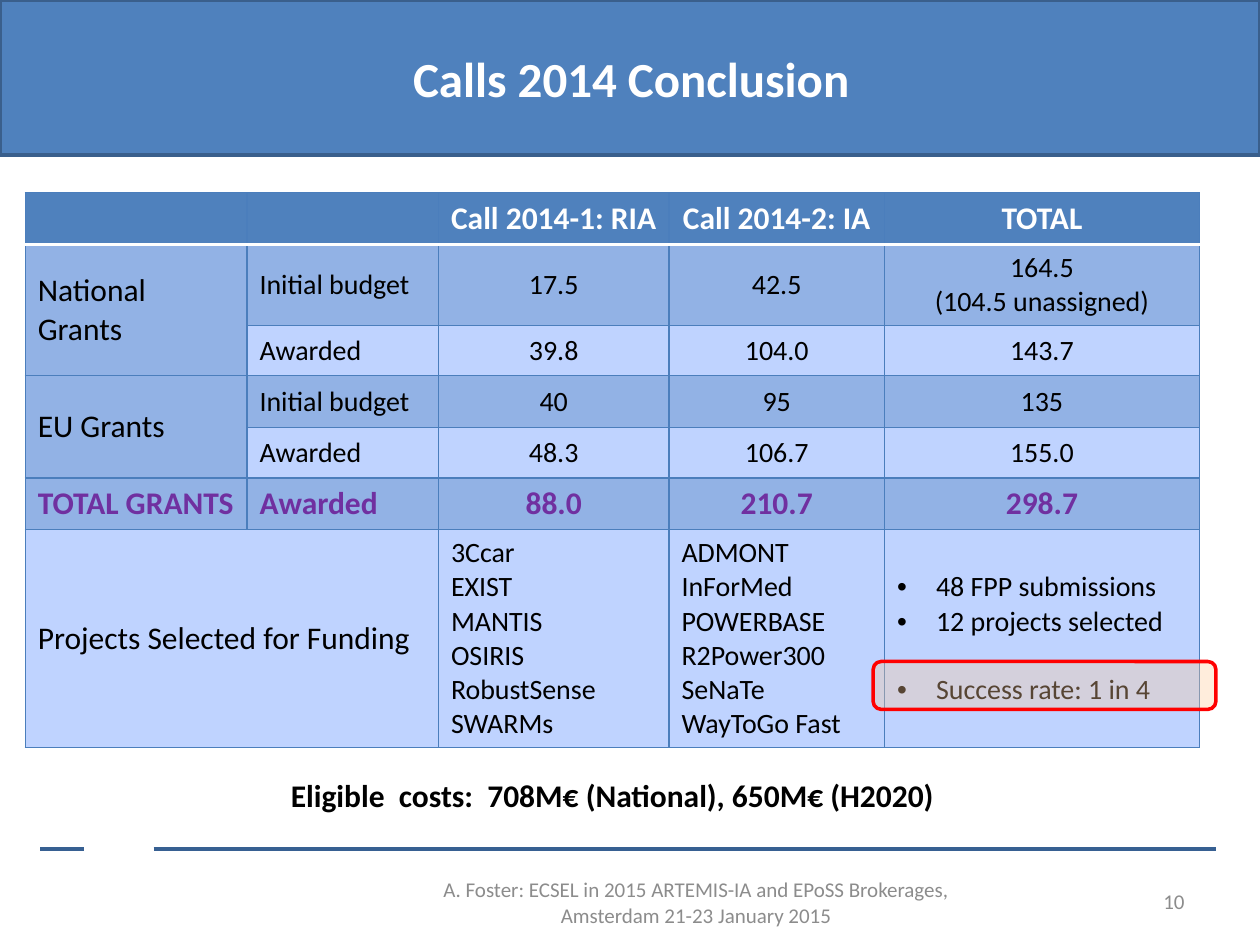
from lxml.etree import SubElement
from pptx import Presentation
from pptx.dml.color import RGBColor as RGB
from pptx.enum.shapes import MSO_CONNECTOR as CONN, MSO_SHAPE as SHAPE
from pptx.enum.text import MSO_ANCHOR as ANC, PP_ALIGN as AL
from pptx.oxml import parse_xml
from pptx.oxml.ns import nsdecls, qn
from pptx.util import Inches, Pt

HEX = {"blue": "4F81BD", "edge": "3A5F8C", "rule": "376092", "grid": "4B7EBC",
       "dark": "92B2E5", "light": "BFD3FF", "white": "FFFFFF", "black": "000000",
       "purple": "7030A0", "grey": "8C8C8C", "peach": "FFCC99", "red": "FF0000"}
COLS = [1.76, 1.52, 1.83, 1.71, 2.5]
ROWS = [0.41, 0.64, 0.4, 0.41, 0.4, 0.41, 1.73]
CELLS = [
    ["", "", "Call 2014-1: RIA", "Call 2014-2: IA", "TOTAL"],
    ["National Grants", "Initial budget", "17.5", "42.5", "164.5\n(104.5 unassigned)"],
    ["", "Awarded", "39.8", "104.0", "143.7"],
    ["EU Grants", "Initial budget", "40", "95", "135"],
    ["", "Awarded", "48.3", "106.7", "155.0"],
    ["TOTAL GRANTS", "Awarded", "88.0", "210.7", "298.7"],
    ["Projects Selected for Funding", "",
     "3Ccar\nEXIST\nMANTIS\nOSIRIS\nRobustSense\nSWARMs",
     "ADMONT\nInForMed\nPOWERBASE\nR2Power300\nSeNaTe\nWayToGo Fast",
     "48 FPP submissions\n12 projects selected\nSuccess rate: 1 in 4"],
]


def color(name):
    return RGB.from_string(HEX[name])


def add_bullet(para):
    props = para._p.get_or_add_pPr()
    props.set("marL", str(Inches(0.31)))
    props.set("indent", str(-Inches(0.31)))
    SubElement(props, qn("a:buFont")).set("typeface", "Arial")
    SubElement(props, qn("a:buChar")).set("char", "•")


def write(frame, text, size=16, tint="black", bold=False, align=AL.LEFT, bullet=False):
    frame.word_wrap = True
    for i, line in enumerate(text.split("\n")):
        para = frame.paragraphs[0] if i == 0 else frame.add_paragraph()
        para.alignment = align
        if bullet:
            add_bullet(para)
        run = para.add_run()
        run.text = line
        font = run.font
        font.name, font.size, font.bold = "Calibri", Pt(size), bold
        font.color.rgb = color(tint)


def add_text(slide, text, box, anchor=ANC.MIDDLE, **style):
    frame = slide.shapes.add_textbox(*map(Inches, box)).text_frame
    frame.vertical_anchor = anchor
    write(frame, text, **style)


def add_box(slide, kind, box, fill, line, alpha=None):
    shape = slide.shapes.add_shape(kind, *map(Inches, box))
    shape.shadow.inherit = False
    shape.fill.solid()
    shape.fill.fore_color.rgb = color(fill)
    shape.line.color.rgb = color(line)
    shape.line.width = Pt(2)
    if alpha:
        tone = shape.element.spPr.find(qn("a:solidFill"))[0]
        SubElement(tone, qn("a:alpha")).set("val", str(alpha * 1000))


def add_rule(slide, left, right, top):
    line = slide.shapes.add_connector(
        CONN.STRAIGHT, Inches(left), Inches(top), Inches(right), Inches(top))
    line.line.color.rgb = color("rule")
    line.line.width = Pt(2.25)
    SubElement(line.element.spPr, qn("a:effectLst"))


def set_borders(cell, row):
    """Draw the grid, with a white rule under the header row."""
    props = cell._tc.get_or_add_tcPr()
    for i, side in enumerate("LRTB"):
        header = (row, side) in ((0, "B"), (1, "T"))
        tint, width = ("white", 2) if header else ("grid", 0.75)
        props.insert(i, parse_xml(
            f'<a:ln{side} {nsdecls("a")} w="{Pt(width)}"><a:solidFill>'
            f'<a:srgbClr val="{HEX[tint]}"/></a:solidFill></a:ln{side}>'))


def cell_style(row, col):
    style = {"align": AL.CENTER if col > 1 and row < 6 else AL.LEFT,
             "size": 18 if col == 0 or row in (0, 5) else 16,
             "bold": row in (0, 5),
             "bullet": (row, col) == (6, 4)}
    style["tint"] = {0: "white", 5: "purple"}.get(row, "black")
    return style


def add_grid(slide):
    box = map(Inches, (0.2, 1.53, sum(COLS), sum(ROWS)))
    table = slide.shapes.add_table(len(ROWS), len(COLS), *box).table
    table.horz_banding = False
    for col, width in zip(table.columns, COLS):
        col.width = Inches(width)
    for row, height in zip(table.rows, ROWS):
        row.height = Inches(height)
    for r, texts in enumerate(CELLS):
        for c, text in enumerate(texts):
            cell = table.cell(r, c)
            cell.vertical_anchor = ANC.MIDDLE
            cell.fill.solid()
            band = "blue" if r == 0 else "dark" if r % 2 else "light"
            cell.fill.fore_color.rgb = color(band)
            set_borders(cell, r)
            if text:
                write(cell.text_frame, text, **cell_style(r, c))
    for first, last in (((1, 0), (2, 0)), ((3, 0), (4, 0)), ((6, 0), (6, 1))):
        table.cell(*first).merge(table.cell(*last))
    table.cell(6, 4).text_frame.paragraphs[2].space_before = Pt(19.5)


def set_title(slide, text):
    title = slide.shapes.title
    title.left, title.top, title.width, title.height = map(Inches, (0.51, -0.01, 9, 1.25))
    title.text_frame.vertical_anchor = ANC.MIDDLE
    write(title.text_frame, text, size=28, tint="white", bold=True, align=AL.CENTER)
    slide.shapes.element.append(title.element)  # in front of the banner


def main():
    deck = Presentation()
    deck.slide_width, deck.slide_height = Inches(10), Inches(7.5)
    slide = deck.slides.add_slide(deck.slide_layouts[5])
    add_box(slide, SHAPE.RECTANGLE, (0, 0, 10, 1.23), "blue", "edge")
    add_rule(slide, 1.22, 9.65, 6.74)
    add_rule(slide, 0.32, 0.67, 6.74)
    add_grid(slide)
    set_title(slide, "Calls 2014 Conclusion")
    add_text(slide, "Eligible  costs:  708M€ (National), 650M€ (H2020)",
             (2.21, 6.11, 6.13, 0.4), anchor=ANC.TOP, size=18, bold=True)
    add_text(slide, "A. Foster: ECSEL in 2015 ARTEMIS-IA and EPoSS Brokerages, "
             "Amsterdam 21-23 January 2015", (3.29, 6.96, 4.47, 0.4),
             size=12, tint="grey", align=AL.CENTER)
    add_text(slide, "10", (8.97, 6.95, 0.53, 0.4), size=12, tint="grey", align=AL.RIGHT)
    add_box(slide, SHAPE.ROUNDED_RECTANGLE, (6.93, 5.25, 2.72, 0.38), "peach", "red", alpha=34)
    deck.save("out.pptx")


if __name__ == "__main__":
    main()
